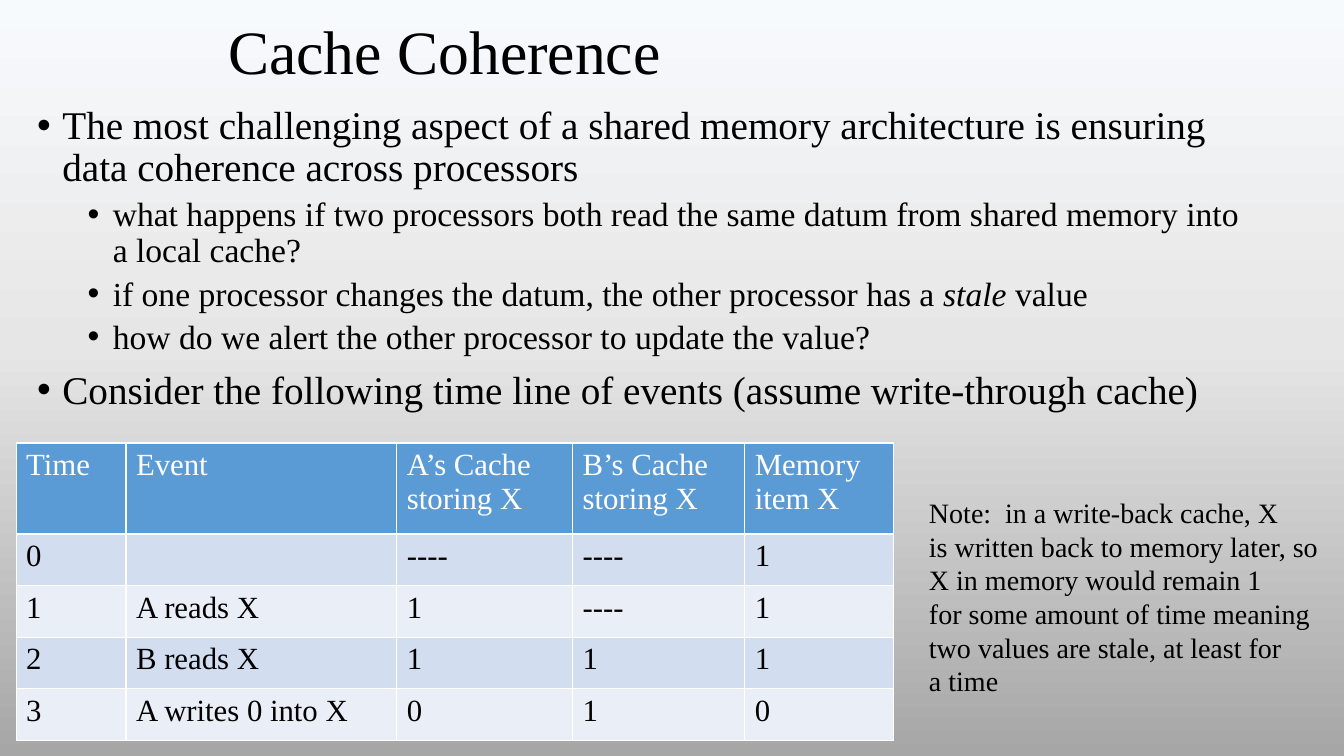
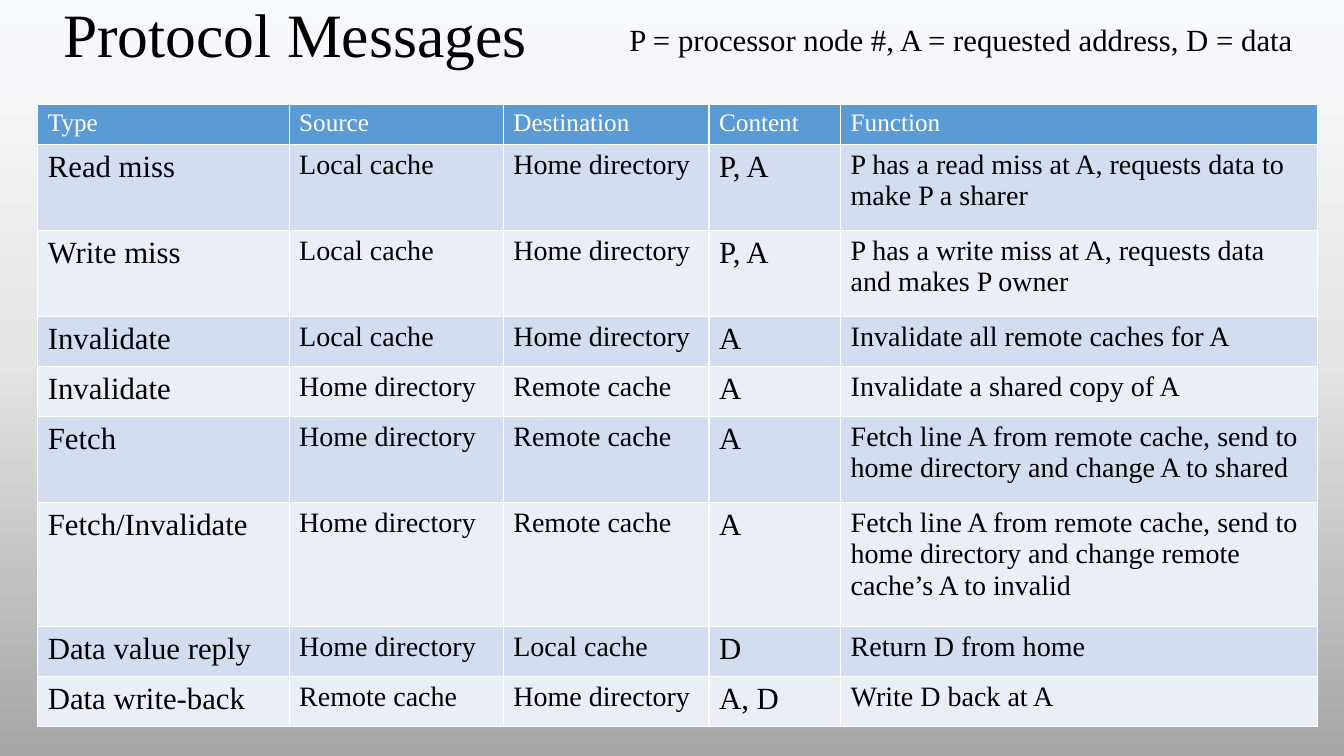
import pptx
import pptx.dml.color
import pptx.enum.text
import pptx.oxml
import pptx.oxml.ns
import pptx.oxml.xmlchemy
import pptx.util
import copy

Pt = pptx.util.Pt
RGBColor = pptx.dml.color.RGBColor
qn = pptx.oxml.ns.qn

FONT = "Times New Roman"
BLACK = RGBColor(0x00, 0x00, 0x00)
WHITE = RGBColor(0xFF, 0xFF, 0xFF)
HEADER = RGBColor(0x5B, 0x9B, 0xD5)
BANDS = [RGBColor(0xEA, 0xEF, 0xF7), RGBColor(0xD2, 0xDE, 0xEF)]
BACKGROUND = [
    (0, RGBColor(0xF7, 0xFA, 0xFD)),
    (0.46, RGBColor(0xE7, 0xE6, 0xE6)),
    (1, RGBColor(0xA6, 0xA6, 0xA6)),
]


def add_run(p, text, size, color=BLACK, italic=False):
    r = p.add_run()
    r.text = text
    r.font.name = FONT
    r.font.size = Pt(size)
    r.font.color.rgb = color
    r.font.italic = italic


def add_table(slide, left, top, widths, heights, rows, header_size, sizes):
    frame = slide.shapes.add_table(
        len(rows), len(widths), Pt(left), Pt(top), Pt(sum(widths)), Pt(sum(heights))
    )
    table = frame.table
    for column, width in zip(table.columns, widths):
        column.width = Pt(width)
    for i, (row, height) in enumerate(zip(rows, heights)):
        table.rows[i].height = Pt(height)
        for j, text in enumerate(row):
            cell = table.cell(i, j)
            tcPr = cell._tc.get_or_add_tcPr()
            for side in ("lnL", "lnR", "lnT", "lnB"):
                ln = pptx.oxml.parse_xml(
                    f'<a:{side} {pptx.oxml.ns.nsdecls("a")} w="{Pt(1)}">'
                    f'<a:solidFill><a:srgbClr val="{WHITE}"/></a:solidFill></a:{side}>'
                )
                tcPr.append(ln)
            cell.fill.solid()
            cell.fill.fore_color.rgb = BANDS[i % 2] if i else HEADER
            if text:
                size, color = (sizes[j], BLACK) if i else (header_size, WHITE)
                add_run(cell.text_frame.paragraphs[0], text, size, color)


prs = pptx.Presentation()
prs.slide_width = Pt(960)
prs.slide_height = Pt(540)

fill = prs.slide_master.background.fill
fill.gradient()
fill.gradient_angle = 270
stops = prs.slide_master.element.find(".//" + qn("a:gsLst"))
stops.append(copy.deepcopy(stops[-1]))
for stop, (position, color) in zip(fill.gradient_stops, BACKGROUND):
    stop.position = position
    stop.color.rgb = color

slides = []
for title, left, top in [("Cache Coherence", 156, -6), ("Protocol Messages", 38, -18)]:
    slide = prs.slides.add_slide(prs.slide_layouts[6])
    tf = slide.shapes.add_textbox(Pt(left), Pt(top), Pt(648), Pt(90)).text_frame
    tf.word_wrap = True
    tf.vertical_anchor = pptx.enum.text.MSO_ANCHOR.MIDDLE
    tf.paragraphs[0].line_spacing = 0.9
    add_run(tf.paragraphs[0], title, 44)
    slides.append(slide)
coherence, messages = slides

bullets = [
    (0, ["The most challenging aspect of a shared memory architecture is ensuring "
         "data coherence across processors"]),
    (1, ["what happens if two processors both read the same datum from shared "
         "memory into a local cache?"]),
    (1, ["if one processor changes the datum, the other processor has a ",
         "stale ", "value"]),
    (1, ["how do we alert the other processor to update the value?"]),
    (0, ["Consider the following time line of events (assume write-through cache)"]),
]
tf = coherence.shapes.add_textbox(Pt(19.5), Pt(72), Pt(875.5), Pt(245)).text_frame
tf.word_wrap = True
for i, (level, runs) in enumerate(bullets):
    p = tf.add_paragraph() if i else tf.paragraphs[0]
    p.level = level
    p.line_spacing = 0.9
    p.space_before = Pt(5 if level else 10)
    pPr = p._p.get_or_add_pPr()
    pPr.set("marL", str(Pt(18 + 36 * level)))
    pPr.set("indent", str(Pt(-18)))
    for tag, key, value in [("a:buFont", "typeface", "Arial"), ("a:buChar", "char", "•")]:
        bullet = pptx.oxml.xmlchemy.OxmlElement(tag)
        bullet.set(key, value)
        pPr.append(bullet)
    for j, text in enumerate(runs):
        add_run(p, text, 24 if level else 28, italic=j == 1)

timeline = [
    ("Time", "Event", "A’s Cache storing X", "B’s Cache storing X", "Memory item X"),
    ("0", "", "----", "----", "1"),
    ("1", "A reads X", "1", "----", "1"),
    ("2", "B reads X", "1", "1", "1"),
    ("3", "A writes 0 into X", "0", "1", "0"),
]
add_table(coherence, 11.5, 316.5, [78.5, 193.5, 125.5, 123, 106.5],
          [65] + [36.8] * 4, timeline, 22, [22] * 5)

protocol = [
    ("Type", "Source", "Destination", "Content", "Function"),
    ("Read miss", "Local cache", "Home directory", "P, A",
     "P has a read miss at A, requests data to make P a sharer"),
    ("Write miss", "Local cache", "Home directory", "P, A",
     "P has a write miss at A, requests data and makes P owner"),
    ("Invalidate", "Local cache", "Home directory", "A",
     "Invalidate all remote caches for A"),
    ("Invalidate", "Home directory", "Remote cache", "A",
     "Invalidate a shared copy of A"),
    ("Fetch", "Home directory", "Remote cache", "A",
     "Fetch line A from remote cache, send to home directory and change A to shared"),
    ("Fetch/Invalidate", "Home directory", "Remote cache", "A",
     "Fetch line A from remote cache, send to home directory and change remote "
     "cache’s A to invalid"),
    ("Data value reply", "Home directory", "Local cache", "D", "Return D from home"),
    ("Data write-back", "Remote cache", "Home directory", "A, D", "Write D back at A"),
]
one, two, three = 35.7, 61.5, 88.5
add_table(messages, 27, 74.5, [179.5, 153, 147, 94, 340.5],
          [27, two, two, one, one, two, three, one, one],
          protocol, 18, [22, 20, 20, 22, 20])

notes = [
    (coherence, (656.5, 350.5, 294, 152.5), 20, [
        "Note:  in a write-back cache, X",
        "is written back to memory later, so",
        "X in memory would remain 1",
        "for some amount of time meaning",
        "two values are stale, at least for",
        "a time",
    ]),
    (messages, (442.5, 11, 493, 34), 22,
     ["P = processor node #, A = requested address, D = data"]),
]
for slide, box, size, lines in notes:
    tf = slide.shapes.add_textbox(*map(Pt, box)).text_frame
    tf.word_wrap = False
    tf.auto_size = pptx.enum.text.MSO_AUTO_SIZE.SHAPE_TO_FIT_TEXT
    for i, line in enumerate(lines):
        p = tf.add_paragraph() if i else tf.paragraphs[0]
        add_run(p, line, size)

prs.save("out.pptx")
